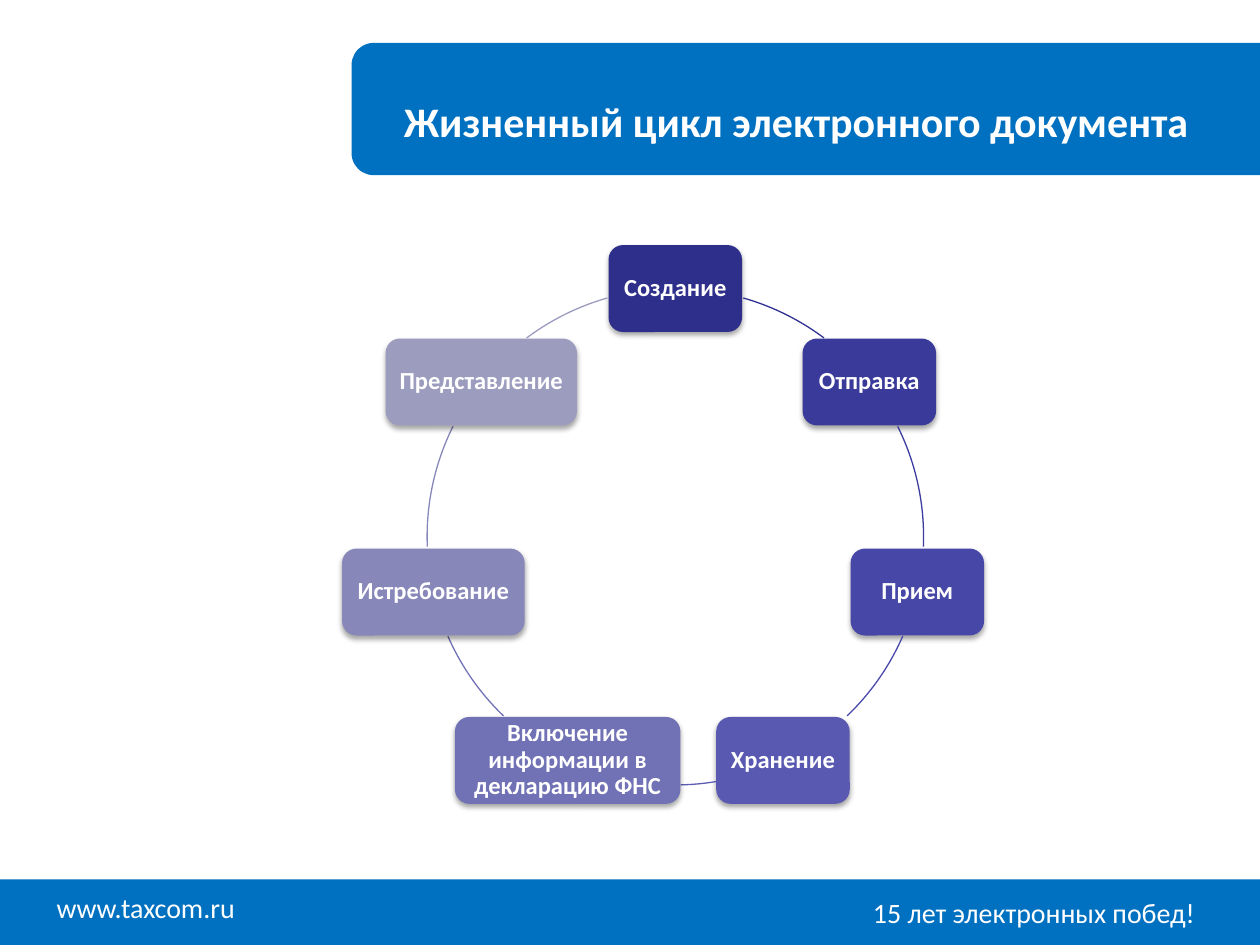
import math

import pptx
import pptx.dml.color
import pptx.enum.shapes
import pptx.enum.text
import pptx.oxml
import pptx.oxml.ns
import pptx.util

Inches = pptx.util.Inches
RGBColor = pptx.dml.color.RGBColor
SHAPE = pptx.enum.shapes.MSO_SHAPE
ALIGN = pptx.enum.text.PP_ALIGN
ANCHOR = pptx.enum.text.MSO_ANCHOR

BLUE = RGBColor(0x00, 0x70, 0xC0)
WHITE = RGBColor(0xFF, 0xFF, 0xFF)

# label, box width, box colour
STAGES = [
    ("Создание", 1.06, RGBColor(0x2E, 0x2E, 0x8B)),
    ("Отправка", 1.06, RGBColor(0x3A, 0x3A, 0x9A)),
    ("Прием", 1.06, RGBColor(0x47, 0x47, 0xA8)),
    ("Хранение", 1.06, RGBColor(0x59, 0x59, 0xB1)),
    ("Включение информации в декларацию ФНС", 1.79, RGBColor(0x71, 0x71, 0xB5)),
    ("Истребование", 1.45, RGBColor(0x87, 0x87, 0xB9)),
    ("Представление", 1.52, RGBColor(0x9C, 0x9C, 0xBF)),
]
# start and end in degrees clockwise from the top, line colour
ARCS = [
    (15.9, 36.8, RGBColor(0x31, 0x31, 0x92)),
    (63.6, 92.3, RGBColor(0x3C, 0x3C, 0xA0)),
    (113.6, 136.2, RGBColor(0x49, 0x49, 0xAD)),
    (170.6, 178.8, RGBColor(0x5C, 0x5C, 0xB3)),
    (223.8, 246.4, RGBColor(0x72, 0x72, 0xB6)),
    (267.7, 296.4, RGBColor(0x87, 0x87, 0xBA)),
    (323.2, 344.1, RGBColor(0x9B, 0x9B, 0xBF)),
]
STAGE_HEIGHT = 0.69
SHADOW = (
    '<a:effectLst %s><a:outerShdw blurRad="39370" dist="22860" dir="5400000" '
    'rotWithShape="0"><a:srgbClr val="000000"><a:alpha val="35000"/></a:srgbClr>'
    "</a:outerShdw></a:effectLst>" % pptx.oxml.ns.nsdecls("a")
)


def add_panel(page, kind, left, top, width, height, colour):
    panel = page.shapes.add_shape(
        kind, Inches(left), Inches(top), Inches(width), Inches(height))
    panel.shadow.inherit = False
    panel.fill.solid()
    panel.fill.fore_color.rgb = colour
    panel.line.fill.background()
    return panel


def write_text(para, text, size, bold=False):
    span = para.add_run()
    span.text = text
    span.font.name = "Calibri"
    span.font.size = pptx.util.Pt(size)
    span.font.bold = bold
    span.font.color.rgb = WHITE


def add_label(page, text, left, top, width, height, size, bold=False, wrap=True):
    box = page.shapes.add_textbox(
        Inches(left), Inches(top), Inches(width), Inches(height))
    box.text_frame.word_wrap = wrap
    write_text(box.text_frame.paragraphs[0], text, size, bold)
    return box


def add_footer(page, left, top, width, height):
    add_panel(page, SHAPE.RECTANGLE, left, top, width, height, BLUE)
    add_label(page, "www.taxcom.ru", left + 0.35, top + 0.04, 1.68, 0.37, 16, wrap=False)
    add_label(page, "15 лет электронных побед!",
              left + width - 3.17, top + 0.08, 2.82, 0.37, 16)


def add_header(page, left, top, width, height):
    """The banner is a top-rounded bar turned so its round end faces left."""
    banner = add_panel(page, SHAPE.ROUND_2_SAME_RECTANGLE,
                       left + (width - height) / 2, top - (width - height) / 2,
                       height, width, BLUE)
    banner.rotation = 270
    title = add_label(page, "Жизненный цикл электронного документа",
                      left + 0.32, top + 0.26, 6.69, 0.71, 24, bold=True)
    title.text_frame.vertical_anchor = ANCHOR.MIDDLE


def add_stage(page, text, centre_x, centre_y, width, colour):
    stage = add_panel(page, SHAPE.ROUNDED_RECTANGLE, centre_x - width / 2,
                      centre_y - STAGE_HEIGHT / 2, width, STAGE_HEIGHT, colour)
    properties = stage.element.spPr
    properties.remove(properties.find(pptx.oxml.ns.qn("a:effectLst")))
    properties.append(pptx.oxml.parse_xml(SHADOW))
    frame = stage.text_frame
    frame.word_wrap = True
    frame.vertical_anchor = ANCHOR.MIDDLE
    frame.margin_left = frame.margin_right = Inches(0.05)
    frame.margin_top = frame.margin_bottom = Inches(0.03)
    para = frame.paragraphs[0]
    para.alignment = ALIGN.CENTER
    para.line_spacing = 0.9
    write_text(para, text, 14, bold=True)


def add_arc(page, left, top, size, start, end, colour):
    arc = page.shapes.add_shape(
        SHAPE.ARC, Inches(left), Inches(top), Inches(size), Inches(size))
    arc.shadow.inherit = False
    arc.fill.background()
    arc.line.color.rgb = colour
    arc.line.width = pptx.util.Pt(0.75)
    for index, angle in enumerate((start, end)):
        # an adjustment of 1.0 is 100000 units, a degree is 60000
        arc.adjustments[index] = (angle - 90) % 360 * 0.6


def add_cycle(page, left, top, size):
    """Stages sit at equal steps on the circle that fills the given square."""
    radius = size / 2
    for index, ((text, width, fill), (start, end, line)) in enumerate(zip(STAGES, ARCS)):
        angle = 2 * math.pi * index / len(STAGES)
        add_stage(page, text, left + radius * (1 + math.sin(angle)),
                  top + radius * (1 - math.cos(angle)), width, fill)
        add_arc(page, left, top, size, start, end, line)


def main():
    deck = pptx.Presentation()
    deck.slide_width = Inches(10)
    deck.slide_height = Inches(7.5)
    page = deck.slides.add_slide(deck.slide_layouts[6])
    add_footer(page, 0, 6.98, 10, 0.52)
    add_header(page, 2.79, 0.34, 7.21, 1.05)
    add_cycle(page, 3.39, 2.29, 3.94)
    deck.save("out.pptx")


if __name__ == "__main__":
    main()
